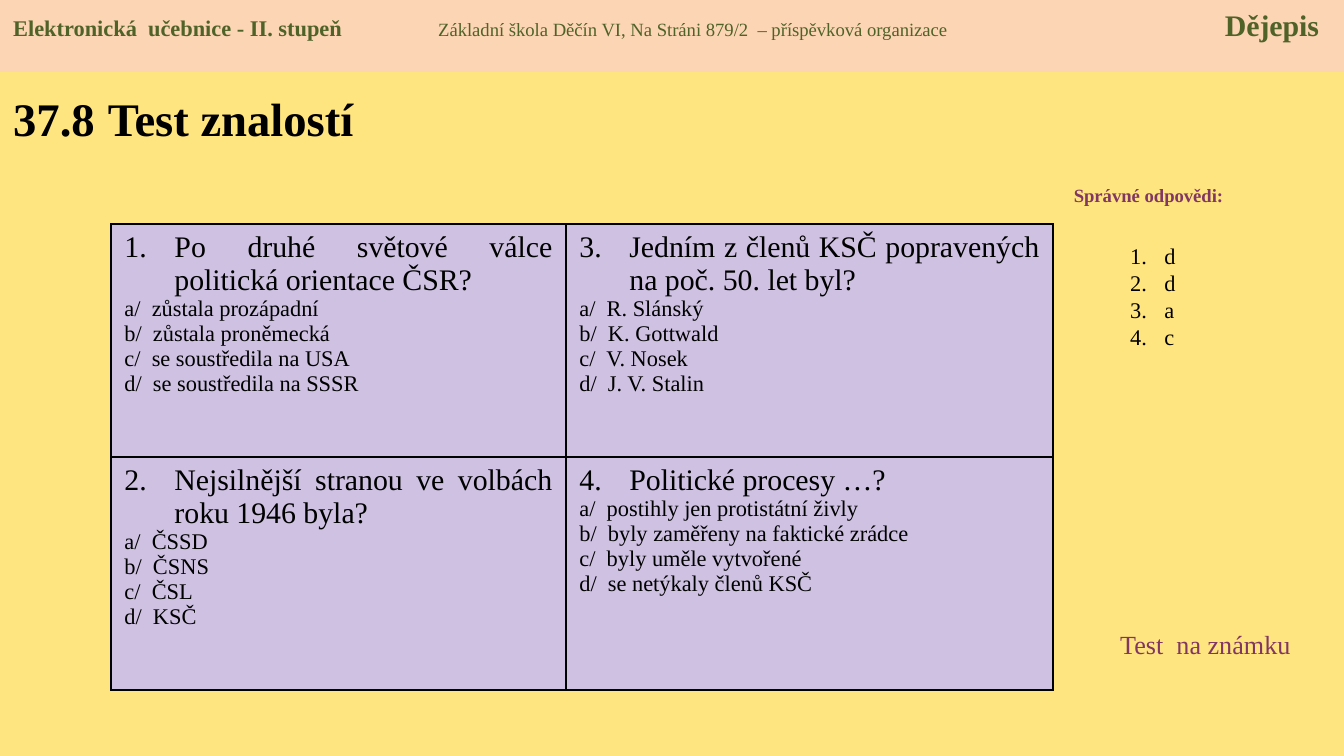
"""Builds a history quiz slide with four questions and their answers."""
from lxml.etree import SubElement
from pptx import Presentation
from pptx.dml.color import RGBColor
from pptx.enum.shapes import MSO_SHAPE
from pptx.enum.text import MSO_ANCHOR, PP_ALIGN
from pptx.oxml.ns import qn
from pptx.util import Pt

PX = 914400 / 134.4
COLORS = {"page": "FFE57F", "header": "FCD5B5", "cell": "CEC1E2",
          "ink": "000000", "green": "4F6228", "plum": "813763"}
STYLES = {
    "subject": {"size": Pt(16), "bold": True},
    "textbook": {"size": Pt(12), "bold": True},
    "school": {"size": Pt(10), "bold": False},
    "title": {"size": Pt(25), "bold": True},
    "title gap": {"size": Pt(28), "bold": True},
    "label": {"size": Pt(10), "bold": True},
    "question": {"size": Pt(16), "bold": False},
    "option": {"size": Pt(12), "bold": False},
    "note": {"size": Pt(14), "bold": False},
}
QUESTIONS = [
    ("Po druhé světové válce politická orientace ČSR?",
     ["zůstala prozápadní", "zůstala proněmecká",
      "se soustředila na USA", "se soustředila na SSSR"]),
    ("Nejsilnější stranou ve volbách roku 1946 byla?",
     ["ČSSD", "ČSNS", "ČSL", "KSČ"]),
    ("Jedním z členů KSČ popravených na poč. 50. let byl?",
     ["R. Slánský", "K. Gottwald", "V. Nosek", "J. V. Stalin"]),
    ("Politické procesy …?",
     ["postihly jen protistátní živly", "byly zaměřeny na faktické zrádce",
      "byly uměle vytvořené", "se netýkaly členů KSČ"]),
]


def write(paragraph, text, style, color="ink"):
    run = paragraph.add_run()
    run.text = text
    run.font.color.rgb = RGBColor.from_string(COLORS[color])
    for key, value in {"name": "Times New Roman", **STYLES[style]}.items():
        setattr(run.font, key, value)


def number(paragraph, indent, start):
    props = paragraph._p.get_or_add_pPr()
    props.set("marL", str(round(indent * PX)))
    props.set("indent", str(round(-indent * PX)))
    SubElement(props, qn("a:buAutoNum"), type="arabicPeriod", startAt=str(start))


prs = Presentation()
prs.slide_width, prs.slide_height = round(1344 * PX), round(756 * PX)
slide = prs.slides.add_slide(prs.slide_layouts[6])
slide.background.fill.solid()
slide.background.fill.fore_color.rgb = RGBColor.from_string(COLORS["page"])

frames = {}
for part, box in {"title": (0, 72, 429, 87), "label": (1043, 177, 211, 36),
                  "key": (1117, 235, 74, 122), "note": (1107, 622, 211, 46)}.items():
    frames[part] = slide.shapes.add_textbox(*(round(n * PX) for n in box)).text_frame
    frames[part].word_wrap = True

title = frames["title"].paragraphs[0]
frames["title"].vertical_anchor = MSO_ANCHOR.MIDDLE
write(title, "37.8", "title")
write(title, " ", "title gap")
write(title, "Test znalostí", "title")

frames["label"].paragraphs[0].alignment = PP_ALIGN.CENTER
write(frames["label"].paragraphs[0], "Správné odpovědi:", "label", "plum")
write(frames["note"].paragraphs[0], "Test  na známku", "note", "plum")

for index, letter in enumerate("ddac"):
    answer = frames["key"].add_paragraph() if index else frames["key"].paragraphs[0]
    answer.line_spacing = Pt(14.5)
    number(answer, 34, 1)
    write(answer, letter, "option")

quiz = slide.shapes.add_table(2, 2, *(round(n * PX) for n in (111, 224, 942, 466))).table
quiz.first_row = quiz.horz_banding = False
for column, width in zip(quiz.columns, (455, 487)):
    column.width = round(width * PX)
for index, (question, options) in enumerate(QUESTIONS):
    cell = quiz.cell(index % 2, index // 2)
    for side in ("lnL", "lnR", "lnT", "lnB"):
        border = SubElement(cell._tc.get_or_add_tcPr(), qn(f"a:{side}"), w="12700")
        SubElement(SubElement(border, qn("a:solidFill")), qn("a:srgbClr"), val=COLORS["ink"])
    cell.fill.solid()
    cell.fill.fore_color.rgb = RGBColor.from_string(COLORS["cell"])
    heading = cell.text_frame.paragraphs[0]
    heading.alignment = PP_ALIGN.JUSTIFY
    number(heading, 50, index + 1)
    write(heading, question, "question")
    for letter, option in zip("abcd", options):
        line = cell.text_frame.add_paragraph()
        line.alignment = PP_ALIGN.JUSTIFY
        write(line, f"{letter}/  {option}", "option")

header = slide.shapes.add_shape(MSO_SHAPE.RECTANGLE, 0, 0, prs.slide_width, round(72 * PX))
header.shadow.inherit = False
header.fill.solid()
header.fill.fore_color.rgb = RGBColor.from_string(COLORS["header"])
header.line.fill.background()
header.text_frame.vertical_anchor = MSO_ANCHOR.TOP
banner = header.text_frame.paragraphs[0]
banner.alignment = PP_ALIGN.LEFT
tabs = SubElement(banner._p.get_or_add_pPr(), qn("a:tabLst"))
for position, side in ((425, "l"), (1306, "r")):
    SubElement(tabs, qn("a:tab"), pos=str(round(position * PX)), algn=side)
write(banner, "Elektronická  učebnice - II. stupeň\t", "textbook", "green")
write(banner, "Základní škola Děčín VI, Na Stráni 879/2  – příspěvková organizace\t", "school", "green")
write(banner, "Dějepis", "subject", "green")

prs.save("out.pptx")
